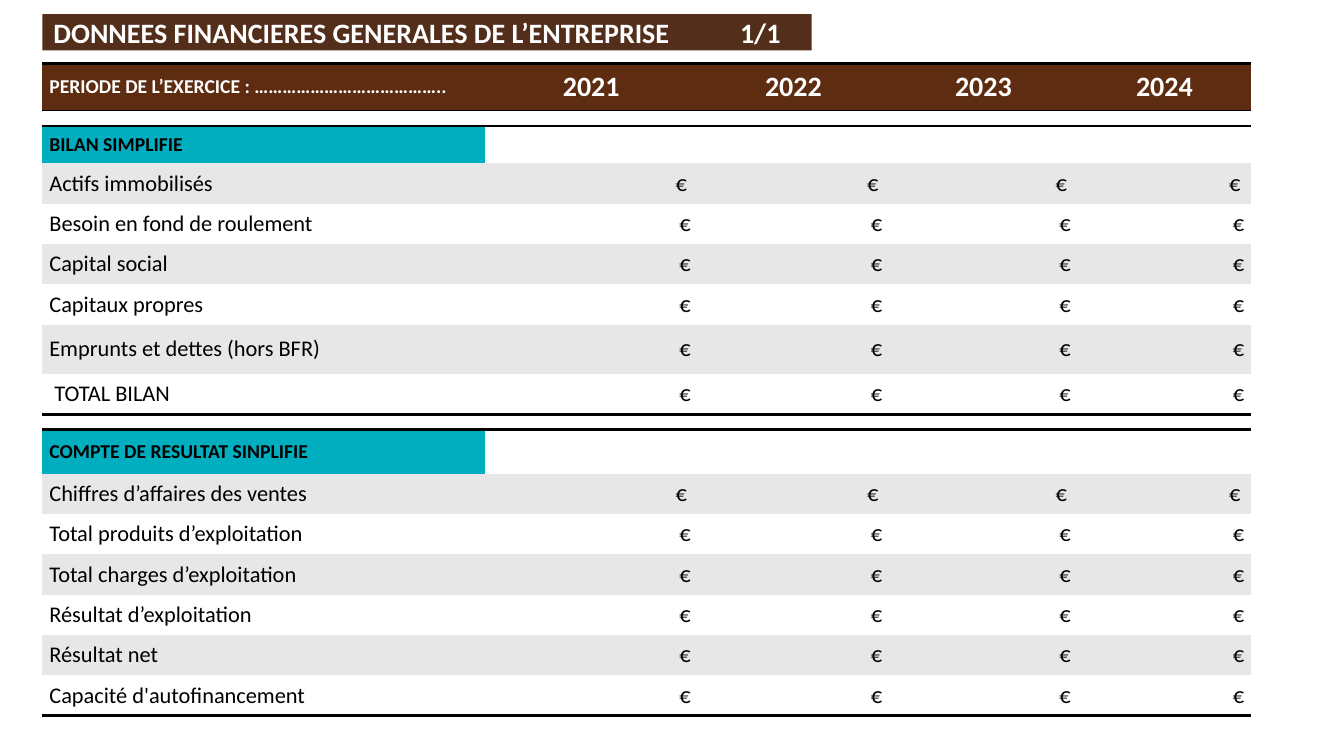
from lxml import etree
from pptx import Presentation
from pptx.dml.color import RGBColor
from pptx.enum.text import MSO_ANCHOR, MSO_AUTO_SIZE, PP_ALIGN
from pptx.oxml.ns import qn
from pptx.util import Inches, Pt

LEFT, CENTER, RIGHT = PP_ALIGN.LEFT, PP_ALIGN.CENTER, PP_ALIGN.RIGHT
MIDDLE = MSO_ANCHOR.MIDDLE
NO_AUTOFIT = MSO_AUTO_SIZE.NONE
FONT = "Calibri"
BLACK, WHITE, GREY = "000000", "FFFFFF", "E7E7E7"
TITLE_BROWN, HEADER_BROWN, TEAL = "532F1B", "5D2C11", "00AEBF"
NO_STYLE = "{2D5ABB26-0587-4C30-8999-92F81FD0307C}"
COLUMNS = [4.39, 2.11, 1.9, 1.87, 1.72]
HEADER = ["PERIODE DE L’EXERCICE : …………………………………..",
          "2021", "2022", "2023", "2024"]
BILAN = ["Actifs immobilisés", "Besoin en fond de roulement", "Capital social",
         "Capitaux propres", "Emprunts et dettes (hors BFR)", "\u00a0TOTAL BILAN"]
RESULTAT = ["Chiffres d’affaires des ventes", "Total produits d’exploitation",
            "Total charges d’exploitation", "Résultat d’exploitation",
            "Résultat net", "Capacité d'autofinancement"]
SECTIONS = [("BILAN SIMPLIFIE", 0.37, BILAN),
            ("COMPTE DE RESULTAT SINPLIFIE", 0.44, RESULTAT)]
ROW, TALL_ROW, SPACER = 0.4, 0.49, 0.15


def rgb(value):
    """Return the colour for a hex string."""
    return RGBColor.from_string(value)


def add_run(p, text, size, color=BLACK, bold=False):
    """Add one formatted run to a paragraph."""
    r = p.add_run()
    r.text = text
    r.font.name, r.font.size, r.font.bold = FONT, Pt(size), bold
    r.font.color.rgb = rgb(color)


def set_border(cell, side, width):
    """Draw a black border on one side (lnT or lnB) of a cell."""
    tc_pr = cell._tc.get_or_add_tcPr()
    ln = etree.Element(qn("a:" + side), w=str(Pt(width)))
    fill = etree.SubElement(ln, qn("a:solidFill"))
    etree.SubElement(fill, qn("a:srgbClr"), val=BLACK)
    tc_pr.insert(len(tc_pr.findall(qn("a:lnT"))), ln)


def fill_cell(cell, runs=(), fill=None, align=LEFT, top=0, bottom=0):
    """Write runs into a cell and set its fill, margins and borders."""
    cell.margin_left = cell.margin_right = Inches(0.07)
    cell.margin_top = cell.margin_bottom = Inches(0.06 if fill else 0)
    cell.vertical_anchor = MIDDLE
    p = cell.text_frame.paragraphs[0]
    p.alignment = align
    for run in runs:
        add_run(p, *run)
    if not runs:
        etree.SubElement(p._p, qn("a:endParaRPr"), sz="800")
    if fill:
        cell.fill.solid()
        cell.fill.fore_color.rgb = rgb(fill)
    else:
        cell.fill.background()
    if top:
        set_border(cell, "lnT", top)
    if bottom:
        set_border(cell, "lnB", bottom)


def add_title(slide, x, y, w, h):
    """Shape the title placeholder as a rounded brown banner."""
    s = slide.shapes.title
    s.left, s.top, s.width, s.height = map(Inches, (x, y, w, h))
    geom = etree.SubElement(s._element.spPr, qn("a:prstGeom"), prst="roundRect")
    etree.SubElement(geom, qn("a:avLst"))
    s.fill.solid()
    s.fill.fore_color.rgb = rgb(TITLE_BROWN)
    tf = s.text_frame
    tf.auto_size, tf.word_wrap, tf.vertical_anchor = NO_AUTOFIT, True, MIDDLE
    tf.margin_left = tf.margin_right = Inches(0.11)
    tf.margin_top = tf.margin_bottom = Inches(0.05)
    p = tf.paragraphs[0]
    tabs = etree.SubElement(p._p.get_or_add_pPr(), qn("a:tabLst"))
    etree.SubElement(tabs, qn("a:tab"), pos=str(Inches(w - 0.82)), algn="l")
    p.alignment = LEFT
    add_run(p, "DONNEES FINANCIERES GENERALES DE L’ENTREPRISE\t1/1", 20, WHITE, True)


def add_header(cells):
    """Fill the period and year row."""
    for i, (cell, text) in enumerate(zip(cells, HEADER)):
        fill_cell(cell, [(text, 20 if i else 14, WHITE, True)], HEADER_BROWN,
                  CENTER if i else LEFT, top=2, bottom=1)


def add_section(rows, heading, labels):
    """Fill a section heading and its banded amount rows."""
    first, *blanks = rows[0]
    fill_cell(first, [(heading, 14, BLACK, True)], TEAL)
    for cell in blanks:
        fill_cell(cell)
    for i, (cells, label) in enumerate(zip(rows[1:], labels)):
        fill = WHITE if i % 2 else GREY
        bottom = 2.25 if label == labels[-1] else 0
        amount = [("€", 16)] if i else [("€", 16), (" ", 12)]
        fill_cell(cells[0], [(label, 16)], fill, bottom=bottom)
        for cell in cells[1:]:
            fill_cell(cell, amount, fill, RIGHT, bottom=bottom)


def add_finance_table(slide, x, y):
    """Build the balance sheet and income table."""
    heights = [0.47]
    for _, head_height, labels in SECTIONS:
        heights += [SPACER, head_height]
        heights += [TALL_ROW if t.startswith("Emprunts") else ROW for t in labels]
    table = slide.shapes.add_table(
        len(heights), len(COLUMNS), Inches(x), Inches(y),
        Inches(sum(COLUMNS)), Inches(sum(heights))).table
    table._tbl.tblPr.find(qn("a:tableStyleId")).text = NO_STYLE
    for column, width in zip(table.columns, COLUMNS):
        column.width = Inches(width)
    for row, height in zip(table.rows, heights):
        row.height = Inches(height)
    rows = [list(row.cells) for row in table.rows]
    add_header(rows[0])
    start = 1
    for n, (heading, _, labels) in enumerate(SECTIONS):
        for cell in rows[start]:
            fill_cell(cell, top=2.25 if n else 1)
        if n:
            rows[start][0].merge(rows[start][-1])
        end = start + len(labels) + 2
        add_section(rows[start + 1:end], heading, labels)
        start = end


def main():
    """Create the financial data slide."""
    prs = Presentation()
    prs.slide_width, prs.slide_height = Inches(13.33), Inches(7.5)
    slide = prs.slides.add_slide(prs.slide_layouts[5])
    add_finance_table(slide, 0.42, 0.63)
    add_title(slide, 0.42, 0.14, 7.63, 0.36)
    prs.save("out.pptx")


if __name__ == "__main__":
    main()
